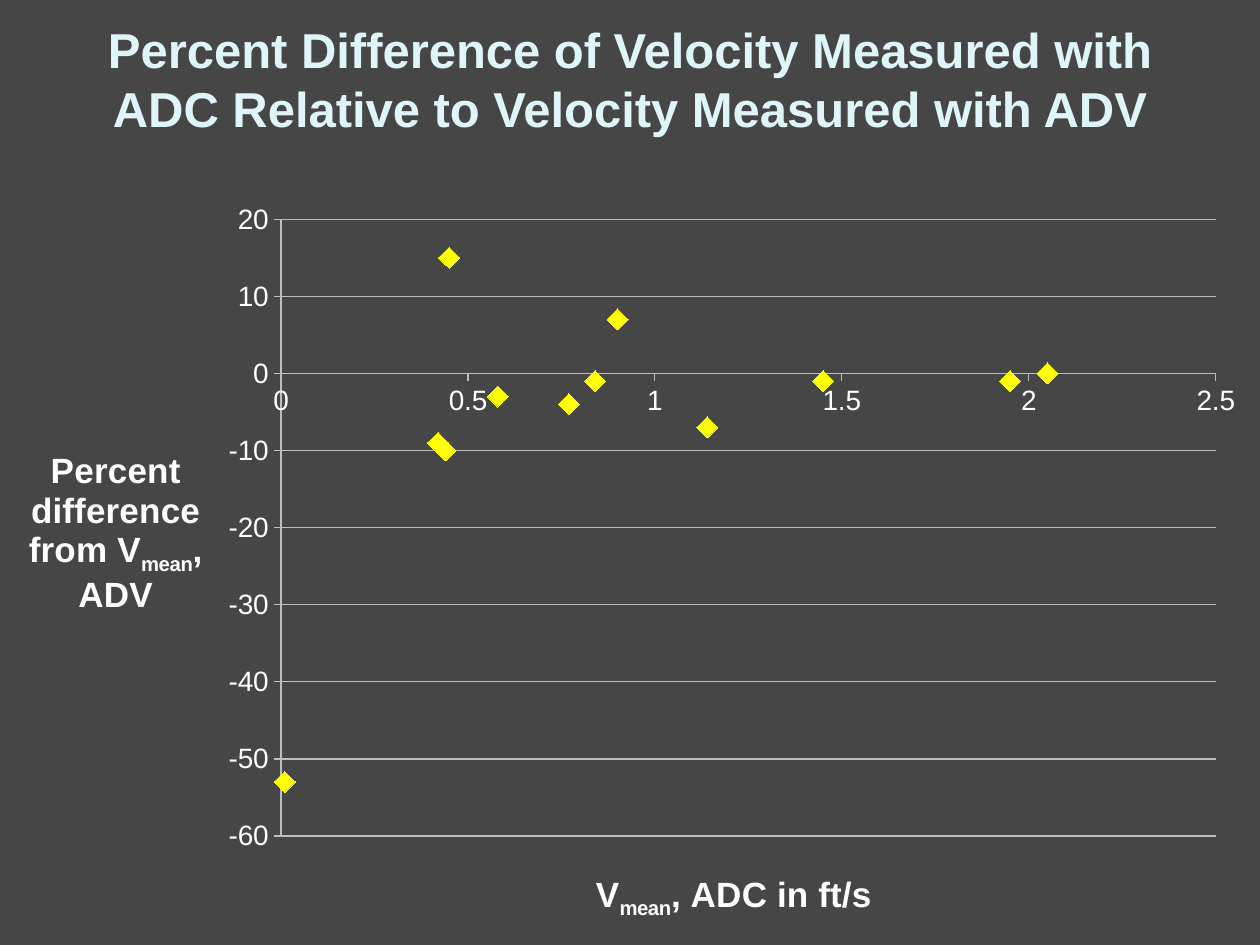
from dataclasses import dataclass

from lxml import etree
from pptx import Presentation
from pptx.chart.data import XyChartData
from pptx.dml.color import RGBColor
from pptx.enum.chart import XL_CHART_TYPE, XL_MARKER_STYLE, XL_TICK_MARK
from pptx.enum.text import MSO_ANCHOR, PP_ALIGN
from pptx.oxml.ns import qn
from pptx.util import Inches, Pt

SCATTER = XL_CHART_TYPE.XY_SCATTER
DIAMOND = XL_MARKER_STYLE.DIAMOND
OUTSIDE = XL_TICK_MARK.OUTSIDE
NO_TICK = XL_TICK_MARK.NONE
MIDDLE = MSO_ANCHOR.MIDDLE
CENTER = PP_ALIGN.CENTER

COLORS = {"background": "464646", "title": "DEF5FA", "text": "FFFFFF",
          "line": "B9BEBE", "marker": "FFFF00"}

POINTS = [(0.45, 15), (0.42, -9), (1.45, -1), (0.9, 7), (0.58, -3), (0.77, -4),
          (0.44, -10), (1.95, -1), (1.14, -7), (2.05, 0), (0.84, -1), (0.01, -53)]


@dataclass
class AxisStyle:
    minimum: float
    maximum: float
    step: float
    spans: list[tuple[str, bool]]
    left: float
    top: float
    gridlines: bool


HORIZONTAL = AxisStyle(0, 2.5, 0.5, [("V", False), ("mean", True), (", ADC in ft/s", False)],
                       0.47, 0.9, False)
VERTICAL = AxisStyle(-60, 20, 10,
                     [("Percent difference from V", False), ("mean", True), (", ADV", False)],
                     0.02, 0.34, True)


def color(name: str) -> RGBColor:
    return RGBColor.from_string(COLORS[name])


def set_font(font, size: float, color_name: str, bold: bool = False) -> None:
    for name, value in {"name": "Arial", "size": Pt(size), "bold": bold}.items():
        setattr(font, name, value)
    font.color.rgb = color(color_name)


def set_line(line) -> None:
    line.color.rgb = color("line")
    line.width = Pt(0.75)


def set_layout(parent, position: int, values: dict[str, str | float]) -> None:
    for old in parent.findall(qn("c:layout")):
        parent.remove(old)
    layout = etree.Element(qn("c:layout"))
    manual = etree.SubElement(layout, qn("c:manualLayout"))
    for tag, value in values.items():
        etree.SubElement(manual, qn(f"c:{tag}")).set("val", str(value))
    parent.insert(position, layout)


def style_axis(axis, style: AxisStyle) -> None:
    settings = {"minimum_scale": style.minimum, "maximum_scale": style.maximum,
                "major_unit": style.step, "major_tick_mark": OUTSIDE,
                "minor_tick_mark": NO_TICK, "has_major_gridlines": style.gridlines}
    for name, value in settings.items():
        setattr(axis, name, value)
    set_font(axis.tick_labels.font, 16, "text")
    axis.tick_labels.number_format = "General"
    axis.tick_labels.number_format_is_linked = False
    set_line(axis.format.line)
    if style.gridlines:
        set_line(axis.major_gridlines.format.line)

    frame = axis.axis_title.text_frame
    para = frame.paragraphs[0]
    para.alignment = CENTER
    set_font(para.font, 20, "text", True)
    for text, subscript in style.spans:
        span = para.add_run()
        span.text = text
        set_font(span.font, 20, "text", True)
        if subscript:
            span.font._element.set("baseline", "-25000")
    body = frame._txBody.find(qn("a:bodyPr"))
    body.set("rot", "0")
    body.set("vert", "horz")
    set_layout(axis.axis_title._element, 1,
               {"xMode": "edge", "yMode": "edge", "x": style.left, "y": style.top})


def add_title(page) -> None:
    box = page.shapes.title
    place = {"left": 0.5, "top": 0, "width": 9, "height": 1.25}
    for name, value in place.items():
        setattr(box, name, Inches(value))
    frame = box.text_frame
    frame.word_wrap = True
    frame.vertical_anchor = MIDDLE
    para = frame.paragraphs[0]
    para.alignment = CENTER
    span = para.add_run()
    span.text = ("Percent Difference of Velocity Measured with ADC "
                 "Relative to Velocity Measured with ADV")
    set_font(span.font, 28, "title", True)


def add_scatter(page) -> None:
    data = XyChartData()
    series_data = data.add_series("Series 1")
    for x, y in POINTS:
        series_data.add_data_point(x, y)
    chart = page.shapes.add_chart(SCATTER, Inches(0), Inches(1.5), Inches(10), Inches(6),
                                  data).chart
    chart.has_legend = False
    chart.has_title = False
    set_font(chart.font, 10, "text")
    chart.plots[0].vary_by_categories = False

    series = chart.plots[0].series[0]
    series.smooth = False
    series.format.line.fill.background()
    marker = series.marker
    marker.style = DIAMOND
    marker.size = 12
    marker.format.fill.solid()
    marker.format.fill.fore_color.rgb = color("marker")
    marker.format.line.color.rgb = color("marker")

    style_axis(chart.category_axis, HORIZONTAL)
    style_axis(chart.value_axis, VERTICAL)
    plot_area = chart._chartSpace.chart.plotArea
    set_layout(plot_area, 0, {"layoutTarget": "inner", "xMode": "edge", "yMode": "edge",
                              "x": 0.223, "y": 0.04, "w": 0.742, "h": 0.816})


def main() -> None:
    deck = Presentation()
    deck.slide_width = Inches(10)
    deck.slide_height = Inches(7.5)
    page = deck.slides.add_slide(deck.slide_layouts[5])
    page.background.fill.solid()
    page.background.fill.fore_color.rgb = color("background")
    add_title(page)
    add_scatter(page)
    deck.save("out.pptx")


if __name__ == "__main__":
    main()
